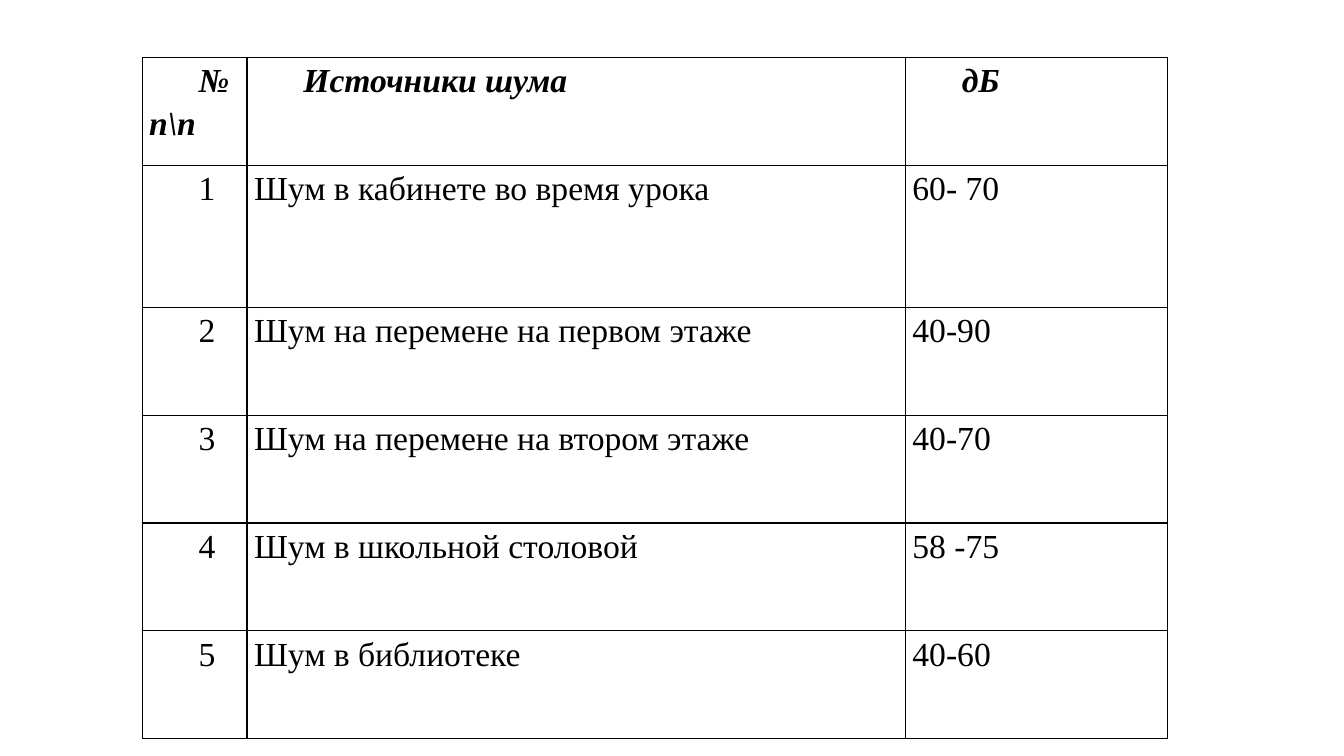
from dataclasses import dataclass

from lxml import etree
from pptx import Presentation
from pptx.dml.color import RGBColor
from pptx.enum.text import PP_ALIGN
from pptx.oxml.ns import qn
from pptx.table import _Cell
from pptx.util import Inches, Pt

LEFT = PP_ALIGN.LEFT
JUSTIFY = PP_ALIGN.JUSTIFY

FONT = "Times New Roman"
BLACK = "000000"
WHITE = "FFFFFF"
COLUMN_WIDTHS = (1.04, 6.53, 2.6)
ROW_HEIGHT = 1.07
HEADINGS = ("№ п\\п", "Источники шума", "дБ")


@dataclass(frozen=True)
class NoiseSource:
    name: str
    decibels: str
    height: float = ROW_HEIGHT


NOISE_SOURCES = (
    NoiseSource("Шум в кабинете во время урока", "60- 70", 1.41),
    NoiseSource("Шум на перемене на первом этаже", "40-90"),
    NoiseSource("Шум на перемене на втором этаже", "40-70"),
    NoiseSource("Шум в школьной столовой", "58 -75"),
    NoiseSource("Шум в библиотеке", "40-60"),
)


def color(value: str) -> RGBColor:
    return RGBColor.from_string(value)


def add_borders(cell: _Cell) -> None:
    properties = cell._tc.get_or_add_tcPr()
    for side in ("a:lnL", "a:lnR", "a:lnT", "a:lnB"):
        line = etree.SubElement(properties, qn(side), w=str(Pt(1)))
        fill = etree.SubElement(line, qn("a:solidFill"))
        etree.SubElement(fill, qn("a:srgbClr"), val=BLACK)


def fill_cell(cell: _Cell, text: str, is_heading: bool, is_number: bool) -> None:
    add_borders(cell)
    cell.fill.solid()
    cell.fill.fore_color.rgb = color(WHITE)
    cell.margin_left = cell.margin_right = Inches(0.07)
    cell.margin_top = cell.margin_bottom = 0
    cell.text_frame.text = text
    para = cell.text_frame.paragraphs[0]
    para.alignment = JUSTIFY if is_number else LEFT
    para.line_spacing = 1.15
    if is_heading or is_number:
        para._p.get_or_add_pPr().set("indent", str(Inches(0.49)))
    font = para.runs[0].font
    font.name = FONT
    font.size = Pt(24)
    font.bold = font.italic = is_heading
    font.color.rgb = color(BLACK)


def main() -> None:
    deck = Presentation()
    deck.slide_width = Inches(13.33)
    deck.slide_height = Inches(7.5)
    page = deck.slides.add_slide(deck.slide_layouts[6])

    rows = [HEADINGS]
    rows += [
        (str(number), source.name, source.decibels)
        for number, source in enumerate(NOISE_SOURCES, start=1)
    ]
    heights = [ROW_HEIGHT] + [source.height for source in NOISE_SOURCES]
    table = page.shapes.add_table(
        len(rows), len(COLUMN_WIDTHS), Inches(1.41), Inches(0.57),
        Inches(sum(COLUMN_WIDTHS)), Inches(sum(heights)),
    ).table

    for column, width in zip(table.columns, COLUMN_WIDTHS):
        column.width = Inches(width)
    for row_index, (texts, height) in enumerate(zip(rows, heights)):
        table.rows[row_index].height = Inches(height)
        for column_index, text in enumerate(texts):
            fill_cell(
                table.cell(row_index, column_index), text,
                is_heading=row_index == 0, is_number=column_index == 0,
            )

    deck.save("out.pptx")


if __name__ == "__main__":
    main()
